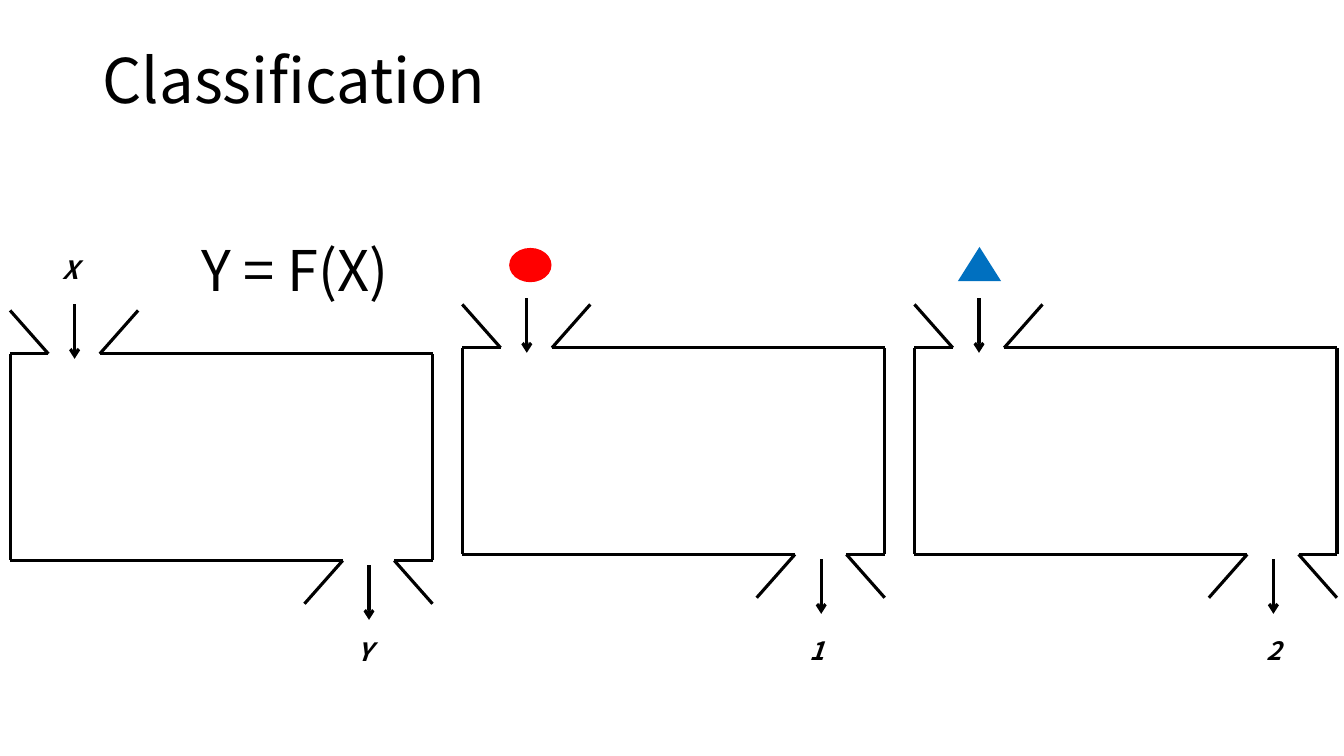
from lxml import etree
from pptx import Presentation
from pptx.dml.color import RGBColor
from pptx.enum.shapes import MSO_CONNECTOR, MSO_SHAPE
from pptx.enum.text import MSO_ANCHOR
from pptx.oxml.ns import qn
from pptx.util import Inches, Pt

# Content
FONT = "Noto Sans CJK KR"
COLORS = {"ink": "000000", "circle": "FF0000", "triangle": "0070C0"}
TITLE = ("Classification", (0.92, 0.4, 11.5, 0.86), 44)
FORMULA = ("Y = F(X)", (1.9, 2.29, 2.38, 0.77), 40)
LABELS = [  # text, box
    ("X", (0.52, 2.47, 0.92, 0.55)),
    ("Y", (3.45, 6.26, 0.92, 0.55)),
    ("1", (7.93, 6.25, 0.34, 0.4)),
    ("2", (12.46, 6.25, 0.34, 0.4)),
]
INPUTS = [  # shape, colour, box
    (MSO_SHAPE.OVAL, "circle", (5.05, 2.46, 0.42, 0.34)),
    (MSO_SHAPE.ISOSCELES_TRIANGLE, "triangle", (9.5, 2.45, 0.43, 0.34)),
]

# Machines: box size, positions, and the opening at a corner
BOX_W, BOX_H = 4.19, 2.05
PITCH, FIRST_LEFT = 4.485, 0.1
MACHINE_TOPS = [3.51, 3.45, 3.45]
MOUTH_START, MOUTH_END, LIP_END, LIP_H = 0.38, 0.89, 1.27, 0.43
ARROW_LEN, OVERLAP, ARROW_IN_X, ARROW_OUT_X = 0.54, 0.05, 0.64, 3.56

# One half of the outline; turning it by 180 degrees gives the other half
HALF = [
    ((0, -LIP_H), (MOUTH_START, 0)),
    ((LIP_END, -LIP_H), (MOUTH_END, 0)),
    ((MOUTH_END, 0), (BOX_W, 0)),
    ((MOUTH_START, 0), (0, 0)),
    ((0, 0), (0, BOX_H)),
]


def turned(point):
    return BOX_W - point[0], BOX_H - point[1]


OUTLINE = HALF + [(turned(a), turned(b)) for a, b in HALF]


def add_line(shapes, start, end, arrow=False):
    c = shapes.add_connector(MSO_CONNECTOR.STRAIGHT,
                             *(Inches(v) for v in (*start, *end)))
    c.line.color.rgb = RGBColor.from_string(COLORS["ink"])
    c.line.width = Pt(2.25)
    sp_pr = c.line._get_or_add_ln().getparent()
    if arrow:
        etree.SubElement(c.line._get_or_add_ln(), qn("a:tailEnd"), type="arrow")
    etree.SubElement(sp_pr, qn("a:effectLst"))


def add_text(shapes, text, box, size, strong=False, anchor=MSO_ANCHOR.TOP, spacing=1.0):
    tf = shapes.add_textbox(*(Inches(v) for v in box)).text_frame
    tf.word_wrap = True
    tf.vertical_anchor = anchor
    p = tf.paragraphs[0]
    p.text = text
    p.line_spacing = spacing
    font = p.runs[0].font
    font.name, font.size = FONT, Pt(size)
    font.bold = font.italic = strong
    font.color.rgb = RGBColor.from_string(COLORS["ink"])


def add_machine(shapes, left, top):
    def place(x, y):
        return left + x, top + y

    group = shapes.add_group_shape()
    for start, end in OUTLINE:
        add_line(group.shapes, place(*start), place(*end))
    for x, tip in ((ARROW_IN_X, OVERLAP), (ARROW_OUT_X, BOX_H + OVERLAP + ARROW_LEN)):
        add_line(shapes, place(x, tip - ARROW_LEN), place(x, tip), arrow=True)


def main():
    prs = Presentation()
    prs.slide_width, prs.slide_height = Inches(13.33), Inches(7.5)
    shapes = prs.slides.add_slide(prs.slide_layouts[6]).shapes

    # Title and formula
    add_text(shapes, *TITLE, anchor=MSO_ANCHOR.MIDDLE, spacing=0.9)
    add_text(shapes, *FORMULA)

    # Machines with their arrows
    for i, top in enumerate(MACHINE_TOPS):
        add_machine(shapes, FIRST_LEFT + i * PITCH, top)

    # Inputs and labels
    for kind, color, box in INPUTS:
        sp = shapes.add_shape(kind, *(Inches(v) for v in box))
        sp.shadow.inherit = False
        sp.fill.solid()
        sp.fill.fore_color.rgb = RGBColor.from_string(COLORS[color])
        sp.line.fill.background()
    for text, box in LABELS:
        add_text(shapes, text, box, 18, strong=True)

    prs.save("out.pptx")


if __name__ == "__main__":
    main()
